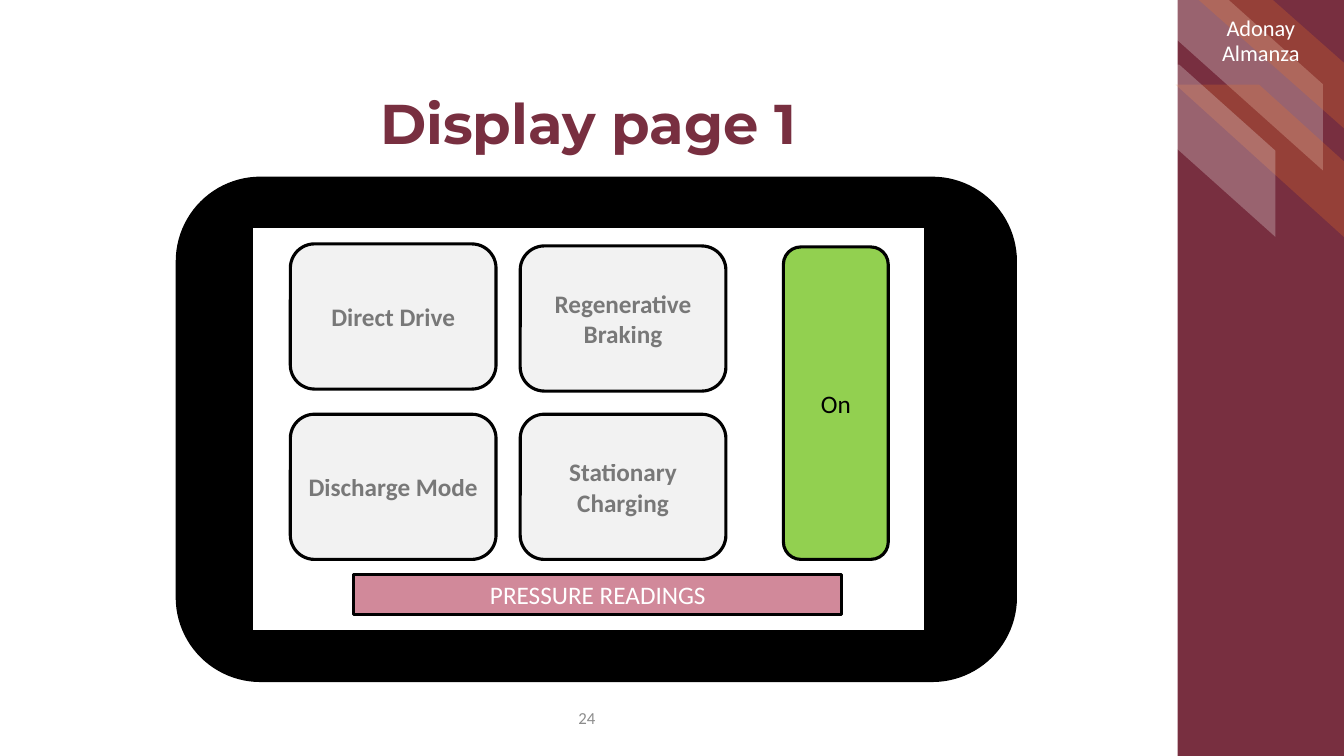
from lxml.etree import SubElement
from pptx import Presentation
from pptx.dml.color import RGBColor
from pptx.enum.shapes import MSO_SHAPE as Shape
from pptx.enum.text import MSO_ANCHOR as Anchor, PP_ALIGN as Align
from pptx.oxml.ns import qn
from pptx.util import Emu, Pt

EMU_PER_PX = 9144
COLORS = {
    "garnet": "782F40",
    "orange": "EE7624",
    "white": "FFFFFF",
    "black": "000000",
    "button": "F2F2F2",
    "green": "92D050",
    "rose": "D1899A",
    "gray": "8C8C8C",
}


def px(length):
    return Emu(length * EMU_PER_PX)


class SlidePainter:
    """Draws styled shapes and text on the current slide."""

    def __init__(self, slide, font="Calibri"):
        self.slide = slide
        self.font = font

    def paint(self, fill, color, opacity=100):
        fill.solid()
        fill.fore_color.rgb = RGBColor.from_string(COLORS[color])
        if opacity < 100:
            node = next(fill._xPr.iter(qn("a:srgbClr")))
            SubElement(node, qn("a:alpha"), val=str(opacity * 1000))

    def shape(self, kind, frame, color, line=0, opacity=100):
        shape = self.slide.shapes.add_shape(kind, *map(px, frame))
        shape.shadow.inherit = False
        self.paint(shape.fill, color, opacity)
        if line:
            self.paint(shape.line.fill, "black")
            shape.line.width = Pt(line)
        else:
            shape.line.fill.background()
        return shape

    def stripe(self, frame, color, cut=0.5):
        shape = self.shape(Shape.DIAGONAL_STRIPE, frame, color, opacity=25)
        shape.adjustments[0] = cut
        shape._element.spPr.find(qn("a:xfrm")).set("flipH", "1")

    def caption(self, box, text, size, color, bold=False, opacity=100, font=None):
        frame = box.text_frame
        frame.word_wrap = True
        frame.vertical_anchor = Anchor.MIDDLE
        frame.text = text
        para = frame.paragraphs[0]
        para.alignment = Align.CENTER
        span = para.runs[0]
        span.font.name = font or self.font
        span.font.size = Pt(size)
        span.font.bold = bold
        self.paint(span.font.fill, color, opacity)
        return frame

    def label(self, frame, text, size, color, **style):
        box = self.slide.shapes.add_textbox(*map(px, frame))
        return self.caption(box, text, size, color, **style)


def main():
    deck = Presentation()
    deck.slide_width, deck.slide_height = px(1333), px(750)
    page = SlidePainter(deck.slides.add_slide(deck.slide_layouts[6]))

    page.shape(Shape.RECTANGLE, (1168, 0, 166, 751), "garnet")
    page.stripe((1121, -2, 191, 171), "white")
    page.stripe((1166, 84, 169, 153), "orange", cut=0.51)
    page.stripe((1074, 64, 191, 171), "white")
    page.stripe((1189, 0, 147, 130), "orange")

    page.shape(Shape.ROUNDED_RECTANGLE, (175, 176, 833, 500), "black", line=1)
    page.shape(Shape.RECTANGLE, (250, 226, 667, 400), "white", line=1)

    power = page.shape(Shape.ROUNDED_RECTANGLE, (777, 245, 104, 310), "green", line=2.25)
    page.caption(power, "On", 18, "black")

    page.label((542, 697, 80, 30), "24", 12, "gray")
    title = page.label((51, 50, 1065, 105), "Display page 1", 40, "garnet",
                       bold=True, font="Montserrat")
    title.vertical_anchor = Anchor.BOTTOM
    title.margin_left = title.margin_right = 0
    title.margin_top = title.margin_bottom = 0
    presenter = page.label((1167, 0, 167, 83), "Adonay Almanza", 16, "white")
    for frame in (title, presenter):
        frame.paragraphs[0].line_spacing = 0.9

    modes = [
        ("Direct Drive", 0, 242),
        ("Regenerative Braking", 1, 244),
        ("Discharge Mode", 0, 411),
        ("Stationary Charging", 1, 411),
    ]
    for text, column, top in modes:
        button = page.shape(Shape.ROUNDED_RECTANGLE,
                            (288 + 228 * column, top, 204, 144), "button", line=2.25)
        page.caption(button, text, 18, "black", bold=True, opacity=50)

    readings = page.shape(Shape.RECTANGLE, (351, 570, 484, 40), "rose", line=2.25)
    page.caption(readings, "PRESSURE READINGS", 18, "white")

    deck.save("out.pptx")


if __name__ == "__main__":
    main()
